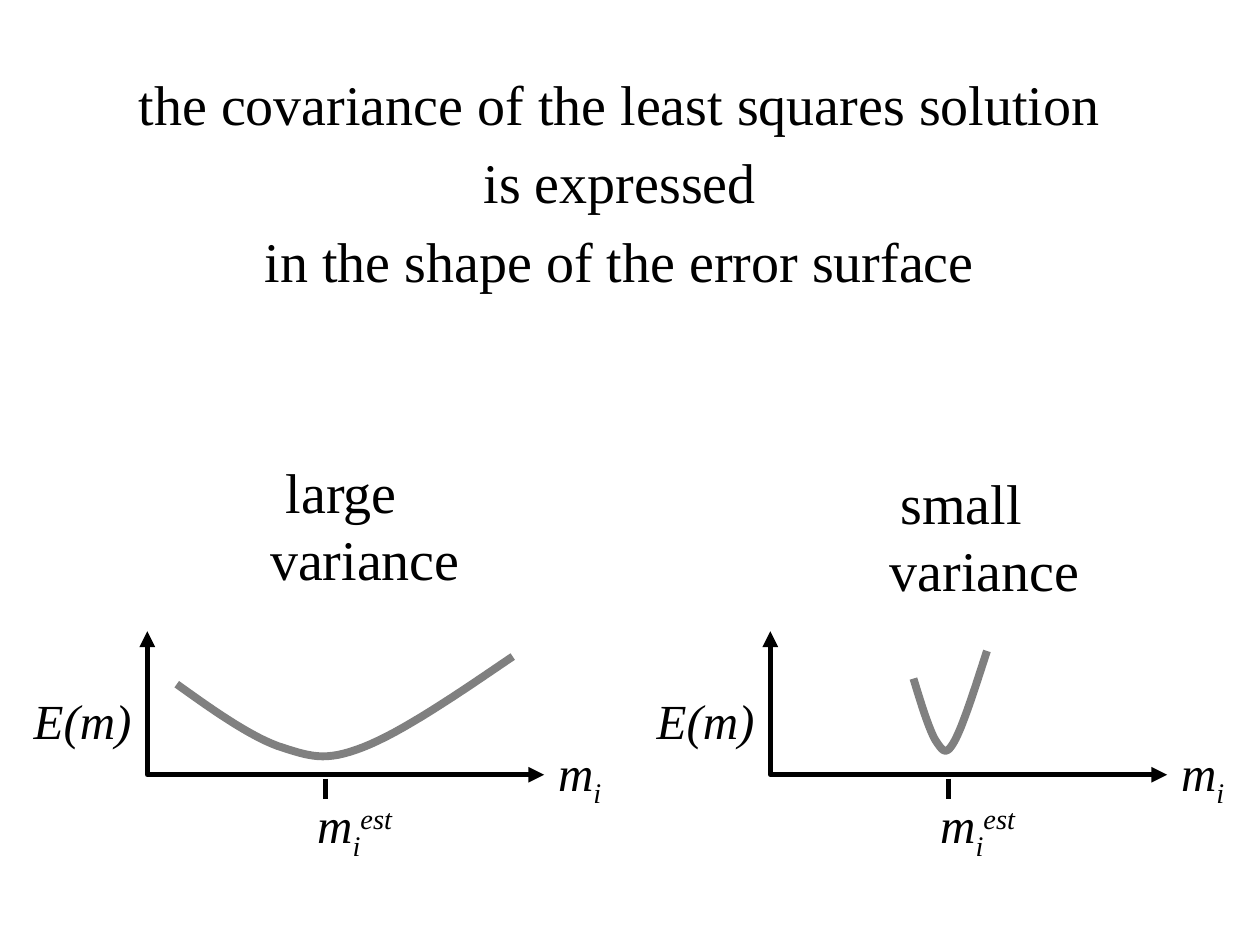
from dataclasses import dataclass

from lxml import etree
from pptx import Presentation
from pptx import util as u
from pptx.dml.color import RGBColor
from pptx.enum import shapes, text
from pptx.oxml.ns import qn

Pt = u.Pt
BLACK = RGBColor(0x00, 0x00, 0x00)
GRAY = RGBColor(0x80, 0x80, 0x80)
FONT = "Times New Roman"
HEADING_SIZE, LABEL_SIZE = 32, 28
HANGING_INDENT = 27
SUBSCRIPT, SUPERSCRIPT = -25000, 30000
STEPS = 16

# Start point and Bézier segments of the error curve, as offsets from its
# left edge (fraction of its width) and from its top (points).
CURVE_START = (0, 15.8)
CURVE_SEGMENTS = [
    ((0.105, 30.2), (0.21, 44.6), (0.3, 51.1)),
    ((0.395, 57), (0.44, 60.5), (0.555, 51.8)),
    ((0.67, 43.2), (0.835, 21.6), (1, 0)),
]


@dataclass(frozen=True)
class Plot:
    left: float
    caption: str
    caption_left: float
    caption_top: float
    curve_left: float
    curve_top: float
    curve_width: float


PLOTS = [
    Plot(84.2, "large variance", 108, 257.8, 101, 375.2, 192),
    Plot(440.2, "small variance", 462.2, 264.2, 522, 372, 42),
]


def add_text_box(page, left: float, top: float, width: float, height: float, wrap: bool):
    box = page.shapes.add_textbox(Pt(left), Pt(top), Pt(width), Pt(height))
    box.text_frame.word_wrap = wrap
    return box.text_frame


def style(span, size: float, italic: bool = False) -> None:
    span.font.name = FONT
    span.font.size = Pt(size)
    span.font.italic = italic
    span.font.color.rgb = BLACK


def add_heading(page, left: float, top: float, width: float, height: float, words: str) -> None:
    """Centred text with a hanging indent, one paragraph a line."""
    frame = add_text_box(page, left, top, width, height, True)
    frame.text = words
    for para in frame.paragraphs:
        para.alignment = text.PP_ALIGN.CENTER
        para.space_before = Pt(0.2 * HEADING_SIZE)
        properties = para._p.get_or_add_pPr()
        properties.set("marL", str(Pt(HANGING_INDENT)))
        properties.set("indent", str(-Pt(HANGING_INDENT)))
        for span in para.runs:
            style(span, HEADING_SIZE)


def add_label(page, left: float, top: float, width: float, *parts: tuple[str, int]) -> None:
    """Italic symbol made of (text, baseline shift) parts."""
    para = add_text_box(page, left, top, width, 41, False).paragraphs[0]
    for words, baseline in parts:
        span = para.add_run()
        span.text = words
        style(span, LABEL_SIZE, italic=True)
        if baseline:
            span.font._element.set("baseline", str(baseline))


def add_path(page, points: list[tuple[float, float]], color: RGBColor, weight: float):
    scaled = [(Pt(x), Pt(y)) for x, y in points]
    builder = page.shapes.build_freeform(*scaled[0])
    builder.add_line_segments(scaled[1:], close=False)
    path = builder.convert_to_shape()
    path.shadow.inherit = False
    path.fill.background()
    path.line.color.rgb = color
    path.line.width = Pt(weight)
    return path


def add_axes(page, left: float, top: float, width: float, height: float) -> None:
    bottom = top + height
    points = [(left, top), (left, bottom), (left + width, bottom)]
    line = add_path(page, points, BLACK, 3).line._get_or_add_ln()
    for end in ("a:headEnd", "a:tailEnd"):
        etree.SubElement(line, qn(end)).set("type", "triangle")


def add_tick(page, x: float, top: float, bottom: float) -> None:
    tick = page.shapes.add_connector(
        shapes.MSO_CONNECTOR.STRAIGHT, Pt(x), Pt(top), Pt(x), Pt(bottom))
    tick.line.color.rgb = BLACK
    tick.line.width = Pt(3)
    etree.SubElement(tick._element.spPr, qn("a:effectLst"))


def bezier(start, first, second, end, t: float) -> tuple[float, float]:
    s = 1 - t
    weights = (s**3, 3 * s * s * t, 3 * s * t * t, t**3)
    corners = (start, first, second, end)
    return (sum(w * c[0] for w, c in zip(weights, corners)),
            sum(w * c[1] for w, c in zip(weights, corners)))


def add_curve(page, left: float, top: float, width: float) -> None:
    points = [CURVE_START]
    for segment in CURVE_SEGMENTS:
        start = points[-1]
        points += [bezier(start, *segment, step / STEPS) for step in range(1, STEPS + 1)]
    add_path(page, [(left + x * width, top + y) for x, y in points], GRAY, 4.5)


def add_plot(page, plot: Plot) -> None:
    left = plot.left
    add_axes(page, left, 360.7, 226.8, 82)
    add_label(page, left - 72, 391, 71.3, ("E(m)", 0))
    add_label(page, left + 227.6, 420.5, 40.3, ("m", 0), ("i", SUBSCRIPT))
    add_tick(page, left + 101.8, 445, 456.5)
    add_curve(page, plot.curve_left, plot.curve_top, plot.curve_width)
    add_label(page, left + 90, 450.7, 61.2,
              ("m", 0), ("i", SUBSCRIPT), ("est", SUPERSCRIPT))
    add_heading(page, plot.caption_left, plot.caption_top, 174.2, 84.2, plot.caption)


def main() -> None:
    deck = Presentation()
    deck.slide_width, deck.slide_height = Pt(720), Pt(540)
    page = deck.slides.add_slide(deck.slide_layouts[6])
    add_heading(page, 30.2, 36, 648, 149.8,
                "the covariance of the least squares solution\n"
                "is expressed\n"
                "in the shape of the error surface")
    for plot in PLOTS:
        add_plot(page, plot)
    deck.save("out.pptx")


if __name__ == "__main__":
    main()
